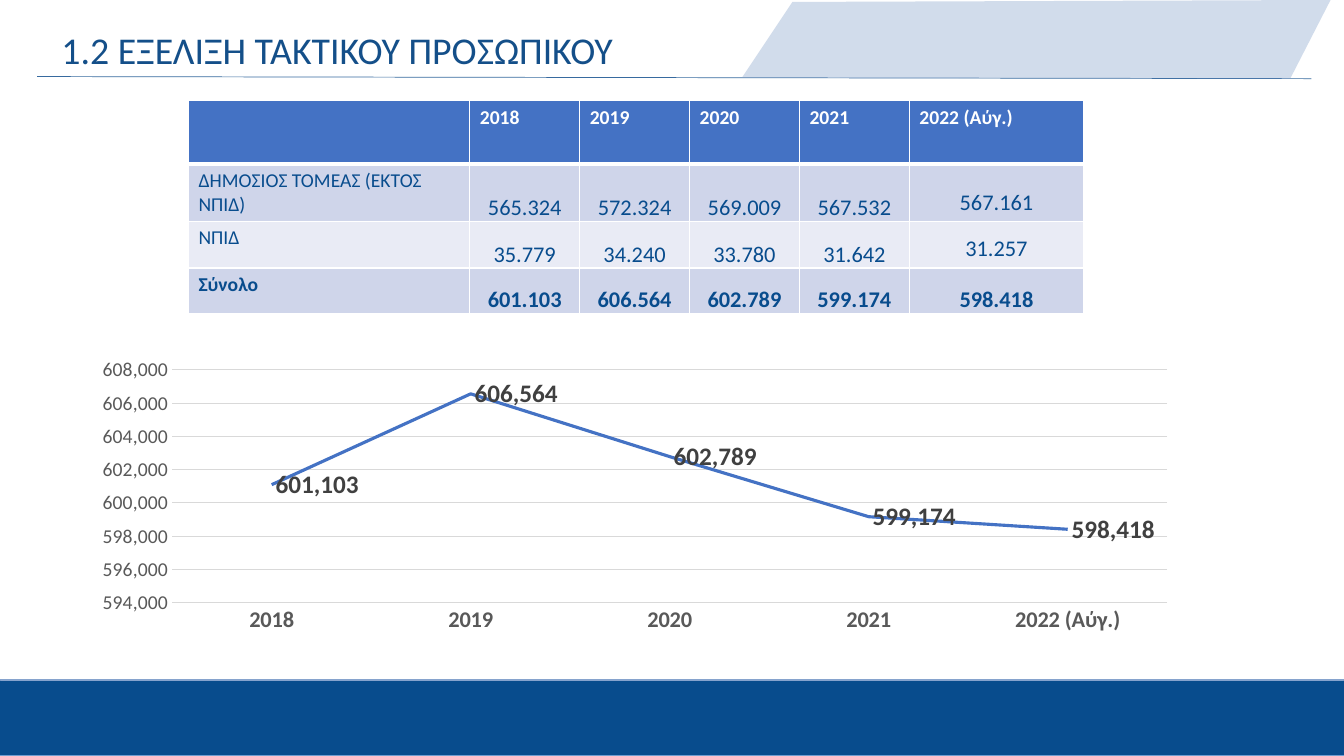
"""Build the slide on the evolution of regular staff, with a table and a line chart."""
from dataclasses import dataclass

from lxml.etree import SubElement
from pptx import Presentation
from pptx.chart.data import CategoryChartData as ChartData
from pptx.dml.color import RGBColor
from pptx.enum.chart import XL_CHART_TYPE as ChartType, XL_LABEL_POSITION as LabelPosition
from pptx.enum.chart import XL_TICK_MARK as TickMark
from pptx.enum.shapes import MSO_CONNECTOR as Connector, MSO_SHAPE as Shape
from pptx.enum.text import MSO_ANCHOR as Anchor, PP_ALIGN as Align
from pptx.oxml import parse_xml
from pptx.oxml.ns import nsdecls, qn
from pptx.util import Pt

FONT = "Calibri"
NAVY, BLUE, WHITE = "084C8D", "4472C4", "FFFFFF"
GRID, GRAY = "D9D9D9", "595959"
YEARS = ["2018", "2019", "2020", "2021", "2022 (Αύγ.)"]
TOTALS = [601103, 606564, 602789, 599174, 598418]
COLUMN_WIDTHS = [201, 78.5, 78.5, 78.5, 78.5, 124.5]


@dataclass
class Bar:
    left: float
    top: float
    width: float
    height: float
    fill: str
    line: str


@dataclass
class StaffRow:
    label: str
    values: list[str]
    height: float
    fill: str
    bold: bool = False
    padded_last: bool = False


BARS = [
    Bar(-1.5, 485.3, 962.7, 54.7, NAVY, "6F9DD0"),
    Bar(0.5, 485.3, 959, 0.8, "86A3CD", "86A3CD"),
]
STAFF_ROWS = [
    StaffRow("ΔΗΜΟΣΙΟΣ ΤΟΜΕΑΣ (ΕΚΤΟΣ ΝΠΙΔ)",
             ["565.324", "572.324", "569.009", "567.532", "567.161"],
             41, "CFD5EA", padded_last=True),
    StaffRow("ΝΠΙΔ", ["35.779", "34.240", "33.780", "31.642", "31.257"],
             33.5, "E9EBF5", padded_last=True),
    StaffRow("Σύνολο", [f"{total:,}".replace(",", ".") for total in TOTALS],
             32.5, "CFD5EA", bold=True),
]


def color(value: str) -> RGBColor:
    return RGBColor.from_string(value)


def set_font(font, size: float, tint: str, bold: bool = False) -> None:
    font.name, font.size, font.bold = FONT, Pt(size), bold
    font.color.rgb = color(tint)


def set_line(line, tint: str, width: float) -> None:
    line.color.rgb = color(tint)
    line.width = Pt(width)


def write(frame, text: str, *, size: float, tint: str, bold: bool = False,
          align: Align = Align.LEFT, spacing: float = 1.0) -> None:
    para = frame.paragraphs[0]
    para.alignment, para.line_spacing = align, spacing
    span = para.add_run()
    span.text = text
    set_font(span.font, size, tint, bold)


def draw_bar(page, bar: Bar) -> None:
    shape = page.shapes.add_shape(Shape.RECTANGLE, Pt(bar.left), Pt(bar.top),
                                  Pt(bar.width), Pt(bar.height))
    shape.shadow.inherit = False
    shape.fill.solid()
    shape.fill.fore_color.rgb = color(bar.fill)
    set_line(shape.line, bar.line, 1)


def draw_heading(page) -> None:
    rule = page.shapes.add_connector(Connector.STRAIGHT, Pt(26.6), Pt(54.7), Pt(936.7), Pt(56.2))
    set_line(rule.line, "376A9F", 0.5)
    SubElement(rule._element.spPr, qn("a:effectLst"))
    box = page.shapes.add_textbox(Pt(40.3), Pt(21.6), Pt(708.5), Pt(34.6))
    frame = box.text_frame
    frame.word_wrap = True
    frame.margin_left = frame.margin_right = Pt(3.6)
    frame.margin_top = frame.margin_bottom = Pt(3.6)
    write(frame, "1.2 ΕΞΕΛΙΞΗ ΤΑΚΤΙΚΟΥ ΠΡΟΣΩΠΙΚΟΥ", size=27, tint="144F89", spacing=0.8)


def draw_banner(page) -> None:
    corners = [(530, 55.4), (566, 1.4), (950.4, 0)]
    outline = page.shapes.build_freeform(Pt(921.6), Pt(56.2))
    outline.add_line_segments([(Pt(x), Pt(y)) for x, y in corners], close=True)
    banner = outline.convert_to_shape()
    banner.shadow.inherit = False
    banner.fill.solid()
    banner.fill.fore_color.rgb = color("87A4CB")
    banner.line.fill.background()
    tint = banner._element.spPr.find(qn("a:solidFill")).find(qn("a:srgbClr"))
    SubElement(tint, qn("a:alpha"), val="38000")


def style_cell(cell, fill: str, bottom: float = 1, top: float = 1) -> None:
    properties = cell._tc.get_or_add_tcPr()
    for side, width in {"L": 1, "R": 1, "T": top, "B": bottom}.items():
        properties.append(parse_xml(
            f'<a:ln{side} {nsdecls("a")} w="{Pt(width)}"><a:solidFill>'
            f'<a:srgbClr val="{WHITE}"/></a:solidFill></a:ln{side}>'))
    cell.fill.solid()
    cell.fill.fore_color.rgb = color(fill)


def draw_table(page) -> None:
    heights = [45] + [row.height for row in STAFF_ROWS]
    table = page.shapes.add_table(len(heights), len(COLUMN_WIDTHS), Pt(134.6), Pt(72),
                                  Pt(sum(COLUMN_WIDTHS)), Pt(sum(heights))).table
    for column, width in zip(table.columns, COLUMN_WIDTHS):
        column.width = Pt(width)
    for row, height in zip(table.rows, heights):
        row.height = Pt(height)
    for index, year in enumerate([""] + YEARS):
        cell = table.cell(0, index)
        style_cell(cell, BLUE, bottom=3)
        if year:
            write(cell.text_frame, year, size=14, tint=WHITE, bold=True)
    for number, row in enumerate(STAFF_ROWS, 1):
        top = 3 if number == 1 else 1
        label = table.cell(number, 0)
        style_cell(label, row.fill, top=top)
        write(label.text_frame, row.label, size=14, tint=NAVY, bold=row.bold)
        for index, value in enumerate(row.values, 1):
            cell = table.cell(number, index)
            style_cell(cell, row.fill, top=top)
            cell.vertical_anchor = Anchor.BOTTOM
            if not (row.padded_last and index == len(YEARS)):
                cell.margin_left = cell.margin_right = cell.margin_top = Pt(0.7)
                cell.margin_bottom = Pt(0)
            write(cell.text_frame, value, size=16, tint=NAVY, bold=row.bold, align=Align.CENTER)


def place_plot(chart, **edges: float) -> None:
    area = chart._chartSpace.chart.plotArea
    for layout in area.findall(qn("c:layout")):
        area.remove(layout)
    modes = '<c:layoutTarget val="inner"/><c:xMode val="edge"/><c:yMode val="edge"/>'
    sizes = "".join(f'<c:{name} val="{value}"/>' for name, value in edges.items())
    area.insert(0, parse_xml(f'<c:layout {nsdecls("c")}><c:manualLayout>{modes}{sizes}'
                             '</c:manualLayout></c:layout>'))


def draw_chart(page) -> None:
    data = ChartData(number_format="#,##0")
    data.categories = YEARS
    data.add_series("Σύνολο", TOTALS)
    chart = page.shapes.add_chart(ChartType.LINE, Pt(59.8), Pt(247), Pt(789.8), Pt(216), data).chart
    chart.has_legend = chart.has_title = False
    set_font(chart.font, 14, "000000")
    place_plot(chart, x=0.08, y=0.08, w=0.9, h=0.77)
    years, staff = chart.category_axis, chart.value_axis
    for axis, size, bold in ((years, 16, True), (staff, 14, False)):
        axis.major_tick_mark = axis.minor_tick_mark = TickMark.NONE
        set_font(axis.tick_labels.font, size, GRAY, bold)
    set_line(years.format.line, GRID, 0.75)
    staff.format.line.fill.background()
    set_line(staff.major_gridlines.format.line, GRID, 0.75)
    staff.minimum_scale, staff.maximum_scale, staff.major_unit = 594000, 608000, 2000
    staff.tick_labels.number_format = "#,##0"
    staff.tick_labels.number_format_is_linked = False
    plot = chart.plots[0]
    plot.vary_by_categories = False
    series = plot.series[0]
    series.smooth = False
    set_line(series.format.line, BLUE, 2.25)
    labels = series.data_labels
    labels.show_value, labels.position = True, LabelPosition.RIGHT
    labels.number_format, labels.number_format_is_linked = "#,##0", False
    set_font(labels.font, 18, "404040", True)


def main() -> None:
    deck = Presentation()
    deck.slide_width, deck.slide_height = Pt(960), Pt(540)
    page = deck.slides.add_slide(deck.slide_layouts[6])
    for bar in BARS:
        draw_bar(page, bar)
    for draw in (draw_heading, draw_banner, draw_table, draw_chart):
        draw(page)
    deck.save("out.pptx")


if __name__ == "__main__":
    main()
